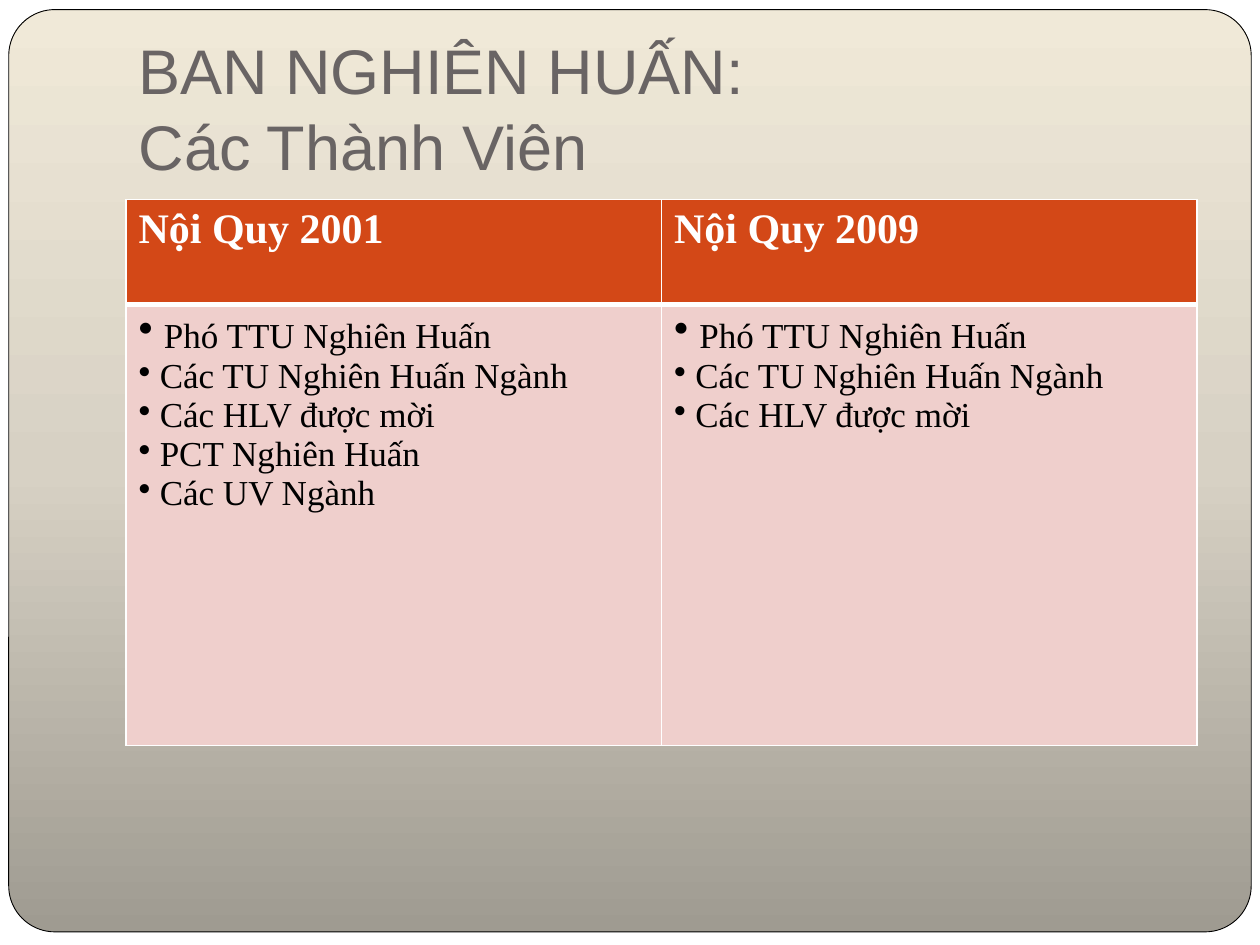
from copy import deepcopy

from lxml import etree
from pptx import Presentation
from pptx.dml.color import RGBColor
from pptx.enum.shapes import MSO_SHAPE
from pptx.enum.text import MSO_ANCHOR, MSO_AUTO_SIZE, PP_ALIGN
from pptx.oxml.ns import qn
from pptx.util import Pt

ROUNDED = MSO_SHAPE.ROUNDED_RECTANGLE
BOTTOM = MSO_ANCHOR.BOTTOM
NO_AUTOFIT = MSO_AUTO_SIZE.NONE
LEFT = PP_ALIGN.LEFT
TITLE_ONLY = 5

TITLE_LINES = ["BAN NGHIÊN HUẤN:", "Các Thành Viên"]
SHARED_MEMBERS = ["Phó TTU Nghiên Huấn", "Các TU Nghiên Huấn Ngành", "Các HLV được mời"]
RULES = {
    "Nội Quy 2001": SHARED_MEMBERS + ["PCT Nghiên Huấn", "Các UV Ngành"],
    "Nội Quy 2009": SHARED_MEMBERS,
}


def color(value):
    return RGBColor.from_string(value)


class Deck:
    title_font = "Arial"
    table_font = "Times New Roman"
    gray, white, black = "696464", "FFFFFF", "000000"
    header_fill, body_fill = "D34817", "EFCFCC"
    panel_stops = [(0, "9F9B91"), (0.5, "D7D1C4"), (1, "F0E9D8")]

    def __init__(self):
        self.presentation = Presentation()
        self.presentation.slide_width = Pt(720)
        self.presentation.slide_height = Pt(540)
        layout = self.presentation.slide_layouts[TITLE_ONLY]
        self.slide = self.presentation.slides.add_slide(layout)
        self.slide.background.fill.solid()
        self.slide.background.fill.fore_color.rgb = color(self.white)

    def run(self, paragraph, text, font, size, ink, bold=False):
        run = paragraph.add_run()
        run.text = text
        run.font.name = font
        run.font.size = Pt(size)
        run.font.bold = bold
        run.font.color.rgb = color(ink)

    def panel(self, left, top, width, height):
        panel = self.slide.shapes.add_shape(ROUNDED, Pt(left), Pt(top), Pt(width), Pt(height))
        panel.adjustments[0] = 0.05
        panel.shadow.inherit = False
        panel.line.color.rgb = color(self.black)
        panel.line.width = Pt(0.5)
        panel.fill.gradient()
        panel.fill.gradient_angle = 90
        first_stop = panel.fill.gradient_stops[0]._gs
        first_stop.addnext(deepcopy(first_stop))
        for stop, (position, shade) in zip(panel.fill.gradient_stops, self.panel_stops):
            stop.position = position
            stop.color.rgb = color(shade)
        self.slide.shapes._spTree.insert(2, panel._element)

    def title(self, lines, left, top, width, height):
        title = self.slide.shapes.title
        title.left, title.top, title.width, title.height = Pt(left), Pt(top), Pt(width), Pt(height)
        frame = title.text_frame
        frame.auto_size = NO_AUTOFIT
        frame.word_wrap = True
        frame.vertical_anchor = BOTTOM
        frame.margin_bottom = Pt(7.2)
        paragraph = frame.paragraphs[0]
        paragraph.alignment = LEFT
        for number, line in enumerate(lines):
            if number:
                paragraph.add_line_break()
            self.run(paragraph, line, self.title_font, 36, self.gray)

    def cell(self, cell, fill, top_width, bottom_width):
        cell.fill.solid()
        cell.fill.fore_color.rgb = color(fill)
        borders = {"a:lnL": 1, "a:lnR": 1, "a:lnT": top_width, "a:lnB": bottom_width}
        properties = cell._tc.get_or_add_tcPr()
        for index, (side, width) in enumerate(borders.items()):
            border = etree.Element(qn(side), w=str(Pt(width)))
            solid = etree.SubElement(border, qn("a:solidFill"))
            etree.SubElement(solid, qn("a:srgbClr"), val=self.white)
            properties.insert(index, border)

    def bullets(self, frame, items):
        for number, item in enumerate(items):
            paragraph = frame.add_paragraph() if number else frame.paragraphs[0]
            etree.SubElement(paragraph._p.get_or_add_pPr(), qn("a:buChar"), char="•")
            self.run(paragraph, " ", self.table_font, 20 if number else 24, self.black)
            self.run(paragraph, item, self.table_font, 20, self.black)

    def table(self, columns, left, top, width, row_heights):
        table = self.slide.shapes.add_table(
            2, len(columns), Pt(left), Pt(top), Pt(width), Pt(sum(row_heights))
        ).table
        table.horz_banding = False
        for row, height in zip(table.rows, row_heights):
            row.height = Pt(height)
        for index, (heading, members) in enumerate(columns.items()):
            table.columns[index].width = Pt(width / len(columns))
            header, body = table.cell(0, index), table.cell(1, index)
            self.cell(header, self.header_fill, 1, 3)
            self.cell(body, self.body_fill, 3, 1)
            self.run(header.text_frame.paragraphs[0], heading,
                     self.table_font, 24, self.white, bold=True)
            self.bullets(body.text_frame, members)


def main():
    deck = Deck()
    deck.panel(5, 5.5, 710, 527)
    deck.title(TITLE_LINES, 72, 21.6, 612, 90)
    deck.table(RULES, 72, 114, 612, [60, 252])
    deck.presentation.save("out.pptx")


if __name__ == "__main__":
    main()
